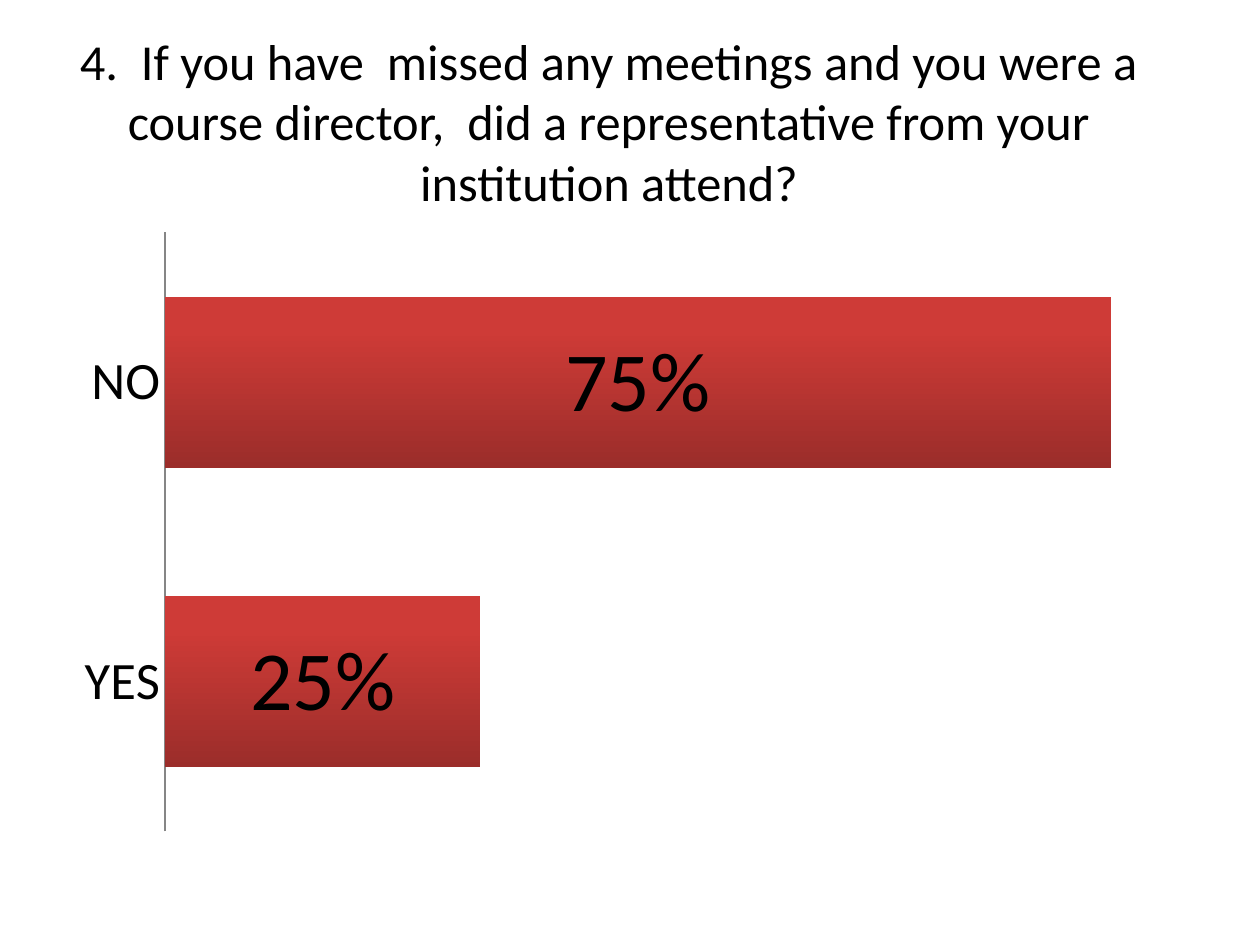
from lxml import etree
from pptx import Presentation
from pptx.chart.data import CategoryChartData
from pptx.dml.color import RGBColor
from pptx.enum.chart import XL_CHART_TYPE, XL_LABEL_POSITION, XL_TICK_MARK
from pptx.enum.text import MSO_ANCHOR, MSO_AUTO_SIZE, PP_ALIGN
from pptx.util import Pt

PX = 914400 // 126


def rgb(value):
    return RGBColor.from_string(value)


def format_font(font, size=18, color="000000", name="Calibri"):
    font.size, font.name, font.bold = Pt(size), name, False
    font.color.rgb = rgb(color)


prs = Presentation()
prs.slide_width, prs.slide_height = 1260 * PX, 945 * PX
s = prs.slides.add_slide(prs.slide_layouts[5])

# Title
title = s.shapes.title
title.left, title.top, title.width, title.height = [v * PX for v in (42, 42, 1134, 157)]
tf = title.text_frame
tf.word_wrap, tf.auto_size = True, MSO_AUTO_SIZE.NONE
tf.vertical_anchor = MSO_ANCHOR.MIDDLE
p = tf.paragraphs[0]
p.alignment = PP_ALIGN.CENTER
r = p.add_run()
r.text = ("4.  If you have  missed any meetings and you were a course director,  "
          "did a representative from your institution attend?")
format_font(r.font, size=28.8)

# Bar chart of the answers
data = CategoryChartData(number_format='0"%"')
data.categories = ["YES", "NO"]
data.add_series("Series 1", (25, 75))
chart = s.shapes.add_chart(XL_CHART_TYPE.BAR_STACKED,
                           *[v * PX for v in (63, 220, 1134, 624)], data).chart
chart.has_legend = chart.has_title = False
format_font(chart.font)

# Axes
axis = chart.category_axis
axis.major_tick_mark = XL_TICK_MARK.NONE
axis.format.line.color.rgb = rgb("868686")
format_font(axis.tick_labels.font, size=30)
values = chart.value_axis
values.minimum_scale, values.maximum_scale = 0, 80
values.has_major_gridlines = values.visible = False

# Bars with a red gradient, dark at the bottom
plot = chart.plots[0]
plot.gap_width, plot.overlap, plot.vary_by_categories = 75, 100, False
fill = plot.series[0].format.fill
fill.gradient()
fill.gradient_angle = 90
for stop, color, position in zip(fill.gradient_stops, ("9B2D2A", "CE3B37"), (0, 0.8)):
    stop.color.rgb, stop.position = rgb(color), position

# Value labels
labels = plot.series[0].data_labels
labels.show_value = True
labels.number_format, labels.number_format_is_linked = '0"%"', False
labels.position = XL_LABEL_POSITION.CENTER
format_font(labels.font, size=48)

# Fixed plot area inside the chart frame
area = chart._chartSpace.chart.plotArea
C = "{http://schemas.openxmlformats.org/drawingml/2006/chart}"
for old in area.findall(C + "layout"):
    area.remove(old)
layout = etree.Element(C + "layout")
manual = etree.SubElement(layout, C + "manualLayout")
for tag, val in (("layoutTarget", "inner"), ("xMode", "edge"), ("yMode", "edge"),
                 ("x", 0.09), ("y", 0.02), ("w", 0.89), ("h", 0.96)):
    etree.SubElement(manual, C + tag, val=str(val))
area.insert(0, layout)

prs.save("out.pptx")
